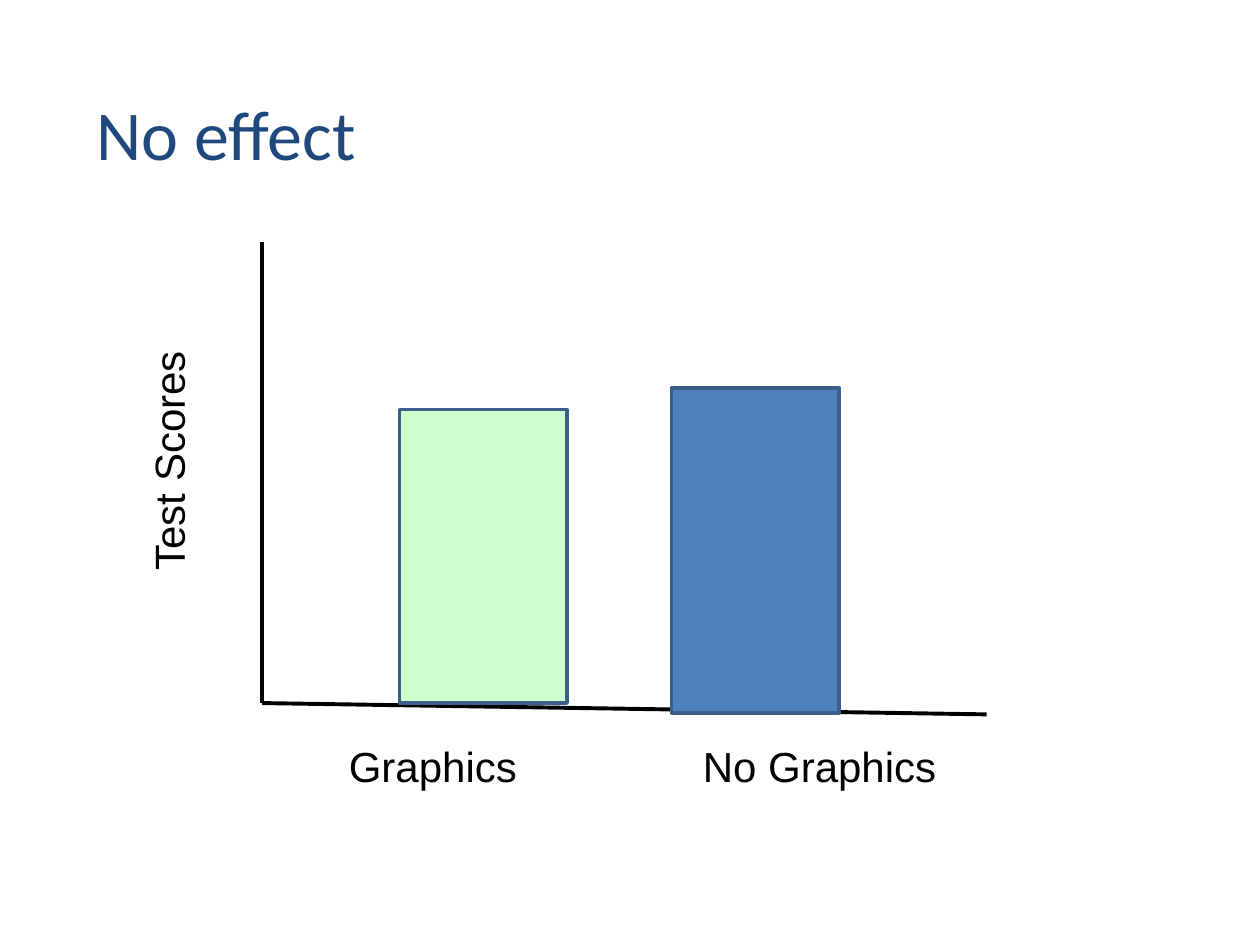
from dataclasses import dataclass

from lxml import etree
from pptx import Presentation
from pptx.dml.color import RGBColor
from pptx.enum.shapes import MSO_CONNECTOR, MSO_SHAPE
from pptx.oxml.ns import qn
from pptx.util import Inches, Pt

BLACK = RGBColor(0x00, 0x00, 0x00)
NAVY = RGBColor(0x1F, 0x49, 0x7D)
GREEN = RGBColor(0xCC, 0xFF, 0xCC)
BLUE = RGBColor(0x4F, 0x81, 0xBD)
EDGE = RGBColor(0x3A, 0x5F, 0x8C)
LINE = MSO_CONNECTOR.STRAIGHT
BOX = MSO_SHAPE.FLOWCHART_PROCESS
BAR_WIDTH = 1.33


@dataclass
class Label:
    text: str
    left: float
    top: float
    width: float
    height: float
    size: int = 24
    font: str = "Arial"
    color: RGBColor = BLACK
    wrap: bool = False
    turn: int = 0
    tab: float = 0


@dataclass
class Axis:
    start: tuple[float, float]
    end: tuple[float, float]


@dataclass
class Bar:
    left: float
    top: float
    height: float
    fill: RGBColor


ORIGIN = (2.08, 5.58)
AXES = [Axis((2.08, 1.92), ORIGIN), Axis((7.83, 5.67), ORIGIN)]
BARS = [Bar(3.17, 3.25, 2.33, GREEN), Bar(5.33, 3.08, 2.58, BLUE)]
LABELS = [
    Label("No effect", 0.67, 0.67, 8.67, 0.75, 40, "Calibri", NAVY, wrap=True),
    Label("Graphics\tNo Graphics", 2.67, 5.83, 5, 0.51, tab=2.81),
    Label("Test Scores", 0.36, 3.39, 1.96, 0.51, turn=270),
]


def add_label(slide, label: Label) -> None:
    box = slide.shapes.add_textbox(Inches(label.left), Inches(label.top),
                                   Inches(label.width), Inches(label.height))
    box.rotation = label.turn
    box.text_frame.word_wrap = label.wrap
    para = box.text_frame.paragraphs[0]
    run = para.add_run()
    run.text = label.text
    run.font.size = Pt(label.size)
    run.font.name = label.font
    run.font.color.rgb = label.color
    if label.tab:
        props = para._p.get_or_add_pPr()
        stops = etree.SubElement(props, qn("a:tabLst"))
        etree.SubElement(stops, qn("a:tab"), pos=str(Inches(label.tab)), algn="l")


def add_axis(slide, axis: Axis) -> None:
    ends = [Inches(v) for v in axis.start + axis.end]
    line = slide.shapes.add_connector(LINE, *ends)
    line.line.color.rgb = BLACK
    line.line.width = Pt(2.25)
    etree.SubElement(line._element.spPr, qn("a:effectLst"))


def add_bar(slide, bar: Bar) -> None:
    shape = slide.shapes.add_shape(BOX, Inches(bar.left), Inches(bar.top),
                                   Inches(BAR_WIDTH), Inches(bar.height))
    shape.shadow.inherit = False
    shape.fill.solid()
    shape.fill.fore_color.rgb = bar.fill
    shape.line.color.rgb = EDGE
    shape.line.width = Pt(2)


def main() -> None:
    deck = Presentation()
    deck.slide_width, deck.slide_height = Inches(10), Inches(7.5)
    slide = deck.slides.add_slide(deck.slide_layouts[6])
    for axis in AXES:
        add_axis(slide, axis)
    for bar in BARS:
        add_bar(slide, bar)
    for label in LABELS:
        add_label(slide, label)
    deck.save("out.pptx")


if __name__ == "__main__":
    main()
